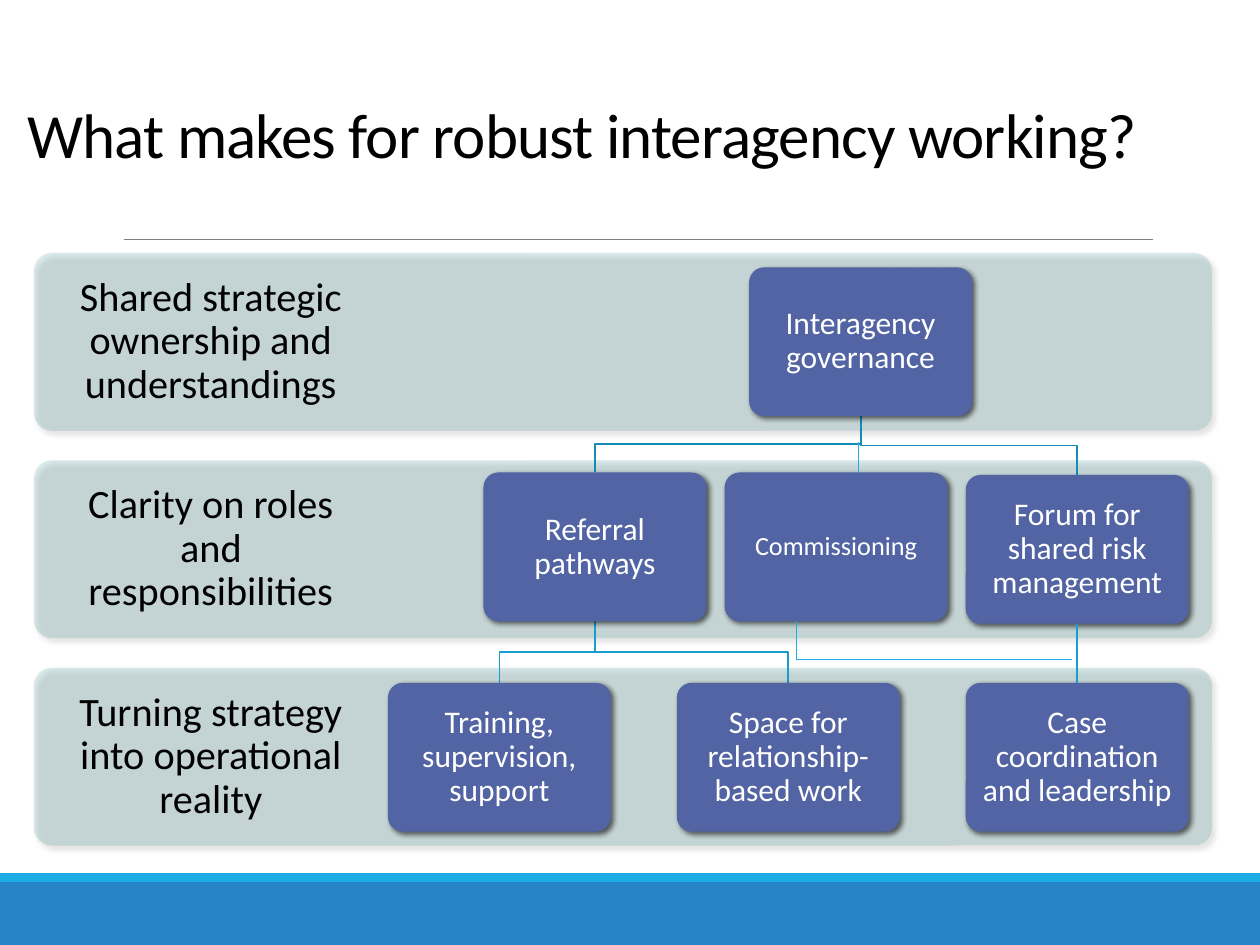
from lxml.etree import SubElement
from pptx import Presentation
from pptx.dml.color import RGBColor
from pptx.enum.shapes import MSO_CONNECTOR, MSO_SHAPE
from pptx.enum.text import MSO_ANCHOR, PP_ALIGN
from pptx.oxml.ns import qn
from pptx.util import Pt

COLORS = {
    "band": "398E8E", "node": "5264A3", "footer": "2683C6", "accent": "1CADE4",
    "upper_link": "168BB7", "lower_link": "199DCF", "rule": "808080",
    "dark": "000000", "light": "FFFFFF",
}
FONT = "Calibri"

BAND_LEFT, BAND_TOP, BAND_WIDTH, BAND_HEIGHT, BAND_PITCH = 19.4, 144.6, 673.2, 101.6, 118.5
LABEL_WIDTH = 202.3
NODE_WIDTH, NODE_HEIGHT = 127.4, 85
TOP_ROW, MIDDLE_ROW, FORUM_TOP, BOTTOM_ROW = 152.8, 270, 271.4, 390.2
RIGHT_CENTER, MIDDLE_PITCH, BOTTOM_PITCH = 615.6, 137.8, 165.1
GOVERNANCE_CENTER = 491.8
REFERRAL_CENTER = RIGHT_CENTER - 2 * MIDDLE_PITCH

BANDS = [
    "Shared strategic ownership and understandings",
    "Clarity on roles and responsibilities",
    "Turning strategy into operational reality",
]
# text, centre, top, font size
NODES = [
    ("Interagency governance", GOVERNANCE_CENTER, TOP_ROW, 18),
    ("Referral pathways", REFERRAL_CENTER, MIDDLE_ROW, 18),
    ("Commissioning", RIGHT_CENTER - MIDDLE_PITCH, MIDDLE_ROW, 15),
    ("Forum for shared risk management", RIGHT_CENTER, FORUM_TOP, 18),
    ("Training, supervision, support", RIGHT_CENTER - 2 * BOTTOM_PITCH, BOTTOM_ROW, 18),
    ("Space for relationship-based work", RIGHT_CENTER - BOTTOM_PITCH, BOTTOM_ROW, 18),
    ("Case coordination and leadership", RIGHT_CENTER, BOTTOM_ROW, 18),
]
# start centre, start row, end centre, end row, colour
ELBOWS = [
    (GOVERNANCE_CENTER, TOP_ROW, REFERRAL_CENTER, MIDDLE_ROW, "upper_link"),
    (GOVERNANCE_CENTER, TOP_ROW, RIGHT_CENTER, FORUM_TOP, "upper_link"),
    (REFERRAL_CENTER, MIDDLE_ROW, RIGHT_CENTER - 2 * BOTTOM_PITCH, BOTTOM_ROW, "lower_link"),
    (REFERRAL_CENTER, MIDDLE_ROW, RIGHT_CENTER - BOTTOM_PITCH, BOTTOM_ROW, "lower_link"),
]
# start x, start y, end x, end y, colour, width
LINES = [
    (70.6, 136.8, 658.8, 136.8, "rule", 0.5),
    (RIGHT_CENTER, FORUM_TOP + NODE_HEIGHT, RIGHT_CENTER, BOTTOM_ROW, "lower_link", 1),
    (455, 376.6, 612.7, 376.6, "accent", 0.25),
    (490.3, 252.7, 490.3, MIDDLE_ROW, "accent", 0.25),
    (455, MIDDLE_ROW + NODE_HEIGHT, 455, 376.6, "accent", 0.25),
]


def color(name):
    return RGBColor.from_string(COLORS[name])


def add_block(slide, kind, left, top, width, height, fill):
    block = slide.shapes.add_shape(kind, Pt(left), Pt(top), Pt(width), Pt(height))
    block.shadow.inherit = False
    block.fill.solid()
    block.fill.fore_color.rgb = color(fill)
    block.line.fill.background()
    return block


def add_rounded(slide, left, top, width, height, fill):
    """Rounded block with a soft shadow to the lower right."""
    block = add_block(slide, MSO_SHAPE.ROUNDED_RECTANGLE, left, top, width, height, fill)
    block.adjustments[0] = 0.1
    effects = block._element.spPr.find(qn("a:effectLst"))
    shadow = SubElement(effects, qn("a:outerShdw"), blurRad=str(Pt(3)), dist=str(Pt(2)),
                        dir="2700000", algn="ctr", rotWithShape="0")
    shade = SubElement(shadow, qn("a:srgbClr"), val=COLORS["dark"])
    SubElement(shade, qn("a:alpha"), val="60000")
    return block


def set_text(shape, text, size, ink, inset, align=PP_ALIGN.CENTER,
             anchor=MSO_ANCHOR.MIDDLE, spacing=0.9):
    frame = shape.text_frame
    frame.word_wrap = True
    frame.vertical_anchor = anchor
    frame.margin_left = frame.margin_right = Pt(inset)
    frame.margin_top = frame.margin_bottom = Pt(inset)
    frame.text = text
    para = frame.paragraphs[0]
    para.alignment = align
    para.line_spacing = spacing
    span = para.runs[0]
    span.font.name = FONT
    span.font.size = Pt(size)
    span.font.color.rgb = color(ink)
    return span


def add_title(slide, text):
    box = slide.shapes.add_textbox(Pt(8.6), Pt(39.6), Pt(684.7), Pt(61.9))
    span = set_text(box, text, 36, "dark", 7.2, PP_ALIGN.LEFT, MSO_ANCHOR.BOTTOM, 0.85)
    box.text_frame.margin_top = box.text_frame.margin_bottom = Pt(3.6)
    span.font._element.set("spc", "-50")


def add_band(slide, text, top):
    band = add_rounded(slide, BAND_LEFT, top, BAND_WIDTH, BAND_HEIGHT, "band")
    fill = band._element.spPr.find(qn("a:solidFill"))
    SubElement(fill[0], qn("a:alpha"), val="18000")
    label = slide.shapes.add_textbox(Pt(BAND_LEFT), Pt(top), Pt(LABEL_WIDTH), Pt(BAND_HEIGHT))
    set_text(label, text, 23, "dark", 13)


def add_node(slide, text, center, top, size):
    node = add_rounded(slide, center - NODE_WIDTH / 2, top, NODE_WIDTH, NODE_HEIGHT, "node")
    set_text(node, text, size, "light", 5)


def add_elbow(slide, start, start_row, end, end_row, ink):
    """Bent link from the bottom of one node to the top of another."""
    bottom = start_row + NODE_HEIGHT
    middle = (bottom + end_row) / 2
    builder = slide.shapes.build_freeform(Pt(start), Pt(bottom))
    corners = [(start, middle), (end, middle), (end, end_row)]
    builder.add_line_segments([(Pt(x), Pt(y)) for x, y in corners], close=False)
    elbow = builder.convert_to_shape()
    elbow.shadow.inherit = False
    elbow.fill.background()
    elbow.line.color.rgb = color(ink)
    elbow.line.width = Pt(1)


def add_line(slide, start_x, start_y, end_x, end_y, ink, width):
    line = slide.shapes.add_connector(MSO_CONNECTOR.STRAIGHT, Pt(start_x), Pt(start_y),
                                      Pt(end_x), Pt(end_y))
    line.line.color.rgb = color(ink)
    line.line.width = Pt(width)
    SubElement(line._element.spPr, qn("a:effectLst"))


def main():
    deck = Presentation()
    deck.slide_width, deck.slide_height = Pt(720), Pt(540)
    page = deck.slides.add_slide(deck.slide_layouts[6])
    add_block(page, MSO_SHAPE.RECTANGLE, 0, 504, 720, 36, "footer")
    add_block(page, MSO_SHAPE.RECTANGLE, 0, 499, 720, 5, "accent")
    add_title(page, "What makes for robust interagency working?")
    for index, text in enumerate(BANDS):
        add_band(page, text, BAND_TOP + index * BAND_PITCH)
    for elbow in ELBOWS:
        add_elbow(page, *elbow)
    for node in NODES:
        add_node(page, *node)
    for line in LINES:
        add_line(page, *line)
    deck.save("out.pptx")


if __name__ == "__main__":
    main()
